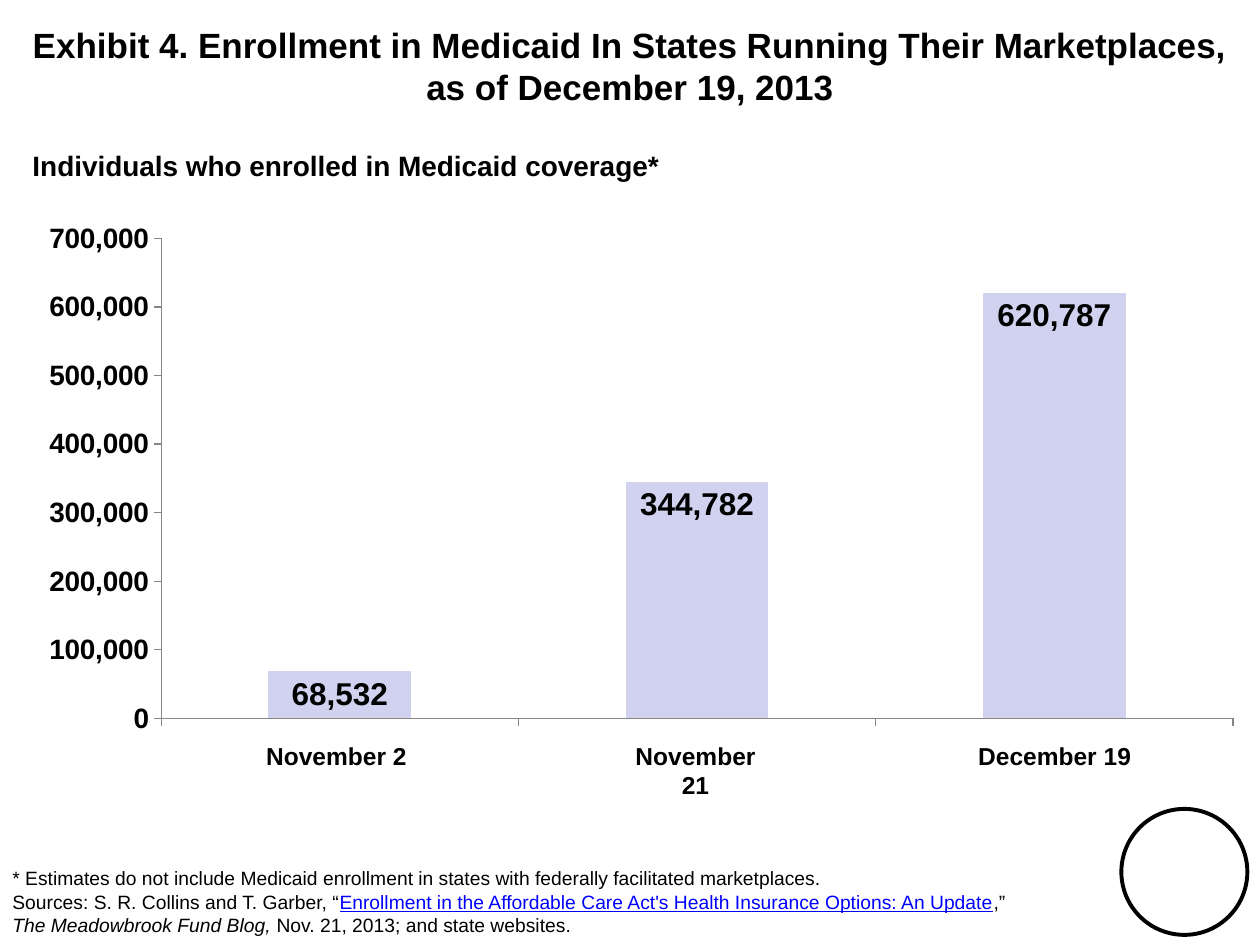
from lxml import etree
from pptx import Presentation
from pptx.chart.data import CategoryChartData
from pptx.dml.color import RGBColor
from pptx.enum.chart import XL_CHART_TYPE, XL_LABEL_POSITION, XL_TICK_LABEL_POSITION, XL_TICK_MARK
from pptx.enum.shapes import MSO_SHAPE
from pptx.enum.text import MSO_ANCHOR, PP_ALIGN
from pptx.oxml.ns import qn
from pptx.util import Inches, Pt

BLACK = RGBColor(0x00, 0x00, 0x00)
LINK_BLUE = RGBColor(0x00, 0x00, 0xFF)
LAVENDER = RGBColor(0xD1, 0xD1, 0xF0)
AXIS_GRAY = RGBColor(0x86, 0x86, 0x86)
FONT = "Arial"
NUMBER_FORMAT = "#,##0"

LINE_BREAK = "\v"
TITLE = ("Exhibit 4. Enrollment in Medicaid In States Running Their Marketplaces,"
         + LINE_BREAK + "as of December 19, 2013")
ENROLLMENT = {"November 2": 68532, "November 21": 344782, "December 19": 620787}
# Each paragraph is a list of (text, format) runs.
FOOTNOTES = [
    [("* Estimates do not include Medicaid enrollment in states with "
      "federally facilitated marketplaces.", {})],
    [("Sources: S. R. Collins and T. Garber, “", {}),
     ("Enrollment in the Affordable Care Act's Health Insurance Options: An Update",
      {"color": LINK_BLUE, "underline": True}),
     (",”", {}),
     (LINE_BREAK, {}),
     ("The Meadowbrook Fund Blog, ", {"italic": True}),
     ("Nov. 21, 2013; and state websites.", {})],
]


def format_font(font, size, color=BLACK, **values):
    font.color.rgb = color
    for name, value in {"name": FONT, "size": Pt(size), **values}.items():
        setattr(font, name, value)


def place(shape, left, top, width, height):
    box = {"left": left, "top": top, "width": width, "height": height}
    for name, value in box.items():
        setattr(shape, name, Inches(value))


def add_title(slide):
    title = slide.shapes.title
    place(title, 0, 0.12, 10, 0.8)
    title.text_frame.text = TITLE
    title.text_frame.vertical_anchor = MSO_ANCHOR.MIDDLE
    paragraph = title.text_frame.paragraphs[0]
    paragraph.alignment = PP_ALIGN.CENTER
    for run in paragraph.runs:
        format_font(run.font, 20, bold=True)


def add_text(slide, box, paragraphs, size, bold=False, align=PP_ALIGN.LEFT, wrap=True):
    frame = slide.shapes.add_textbox(*map(Inches, box)).text_frame
    frame.word_wrap = wrap
    for index, runs in enumerate(paragraphs):
        paragraph = frame.add_paragraph() if index else frame.paragraphs[0]
        paragraph.alignment = align
        for text, values in runs:
            if text == LINE_BREAK:
                paragraph.add_line_break()
                continue
            run = paragraph.add_run()
            run.text = text
            format_font(run.font, size, bold=bold, **values)


def set_plot_layout(chart, **shares):
    """Fix the inner plot area, given as shares of the chart's size."""
    plot_area = chart.plots[0]._element.getparent()
    for old in plot_area.findall(qn("c:layout")):
        plot_area.remove(old)
    layout = etree.Element(qn("c:layout"))
    manual = etree.SubElement(layout, qn("c:manualLayout"))
    settings = {"layoutTarget": "inner", "xMode": "edge", "yMode": "edge", **shares}
    for name, value in settings.items():
        etree.SubElement(manual, qn(f"c:{name}")).set("val", str(value))
    plot_area.insert(0, layout)


def style_axis(axis):
    values = {"has_major_gridlines": False, "major_tick_mark": XL_TICK_MARK.OUTSIDE,
              "minor_tick_mark": XL_TICK_MARK.NONE}
    for name, value in values.items():
        setattr(axis, name, value)
    format_font(axis.tick_labels.font, 16, bold=True)
    axis.format.line.color.rgb = AXIS_GRAY
    axis.format.line.width = Pt(0.75)


def add_enrollment_chart(slide):
    data = CategoryChartData(number_format=NUMBER_FORMAT)
    data.categories = [str(number + 1) for number in range(len(ENROLLMENT))]
    data.add_series("Series 1", list(ENROLLMENT.values()))
    chart = slide.shapes.add_chart(
        XL_CHART_TYPE.COLUMN_STACKED, *map(Inches, (0.12, 1.08, 9.67, 5.08)), data).chart
    format_font(chart.font, 18, bold=True)
    chart.has_legend = False
    chart.has_title = False
    set_plot_layout(chart, x=0.12, y=0.16, w=0.88, h=0.75)

    style_axis(chart.category_axis)
    chart.category_axis.tick_label_position = XL_TICK_LABEL_POSITION.NONE
    value_axis = chart.value_axis
    style_axis(value_axis)
    scale = {"minimum_scale": 0, "maximum_scale": 700000, "major_unit": 100000}
    for name, value in scale.items():
        setattr(value_axis, name, value)
    value_axis.tick_labels.number_format = NUMBER_FORMAT
    value_axis.tick_labels.number_format_is_linked = False

    plot = chart.plots[0]
    label_values = {"show_value": True, "number_format": NUMBER_FORMAT,
                    "number_format_is_linked": False,
                    "position": XL_LABEL_POSITION.INSIDE_END}
    plot.gap_width, plot.overlap = 150, 100
    plot.vary_by_categories = False
    plot.has_data_labels = True
    for name, value in label_values.items():
        setattr(plot.data_labels, name, value)
    format_font(plot.data_labels.font, 18, bold=True)
    fill = plot.series[0].format.fill
    fill.solid()
    fill.fore_color.rgb = LAVENDER


def add_date_labels(slide):
    first_center, step, width = 2.67, 2.85, 1.42
    for column, date in enumerate(ENROLLMENT):
        left = first_center + column * step - width / 2
        add_text(slide, (left, 5.83, width, 0.34), [[(date, {})]], 14,
                 bold=True, align=PP_ALIGN.CENTER, wrap=False)


def add_emblem_circle(slide):
    circle = slide.shapes.add_shape(MSO_SHAPE.OVAL, *map(Inches, (8.9, 6.42, 1, 1)))
    circle.shadow.inherit = False
    circle.fill.background()
    circle.line.color.rgb = BLACK
    circle.line.width = Pt(2.25)


def main():
    presentation = Presentation()
    presentation.slide_width, presentation.slide_height = Inches(10), Inches(7.5)
    slide = presentation.slides.add_slide(presentation.slide_layouts.get_by_name("Title Only"))
    add_emblem_circle(slide)
    add_title(slide)
    add_enrollment_chart(slide)
    add_text(slide, (0.16, 1.13, 6.5, 0.37),
             [[("Individuals who enrolled in Medicaid coverage*", {})]], 16, bold=True)
    add_text(slide, (0, 6.83, 10, 0.66), FOOTNOTES, 11)
    add_date_labels(slide)
    presentation.save("out.pptx")


if __name__ == "__main__":
    main()
